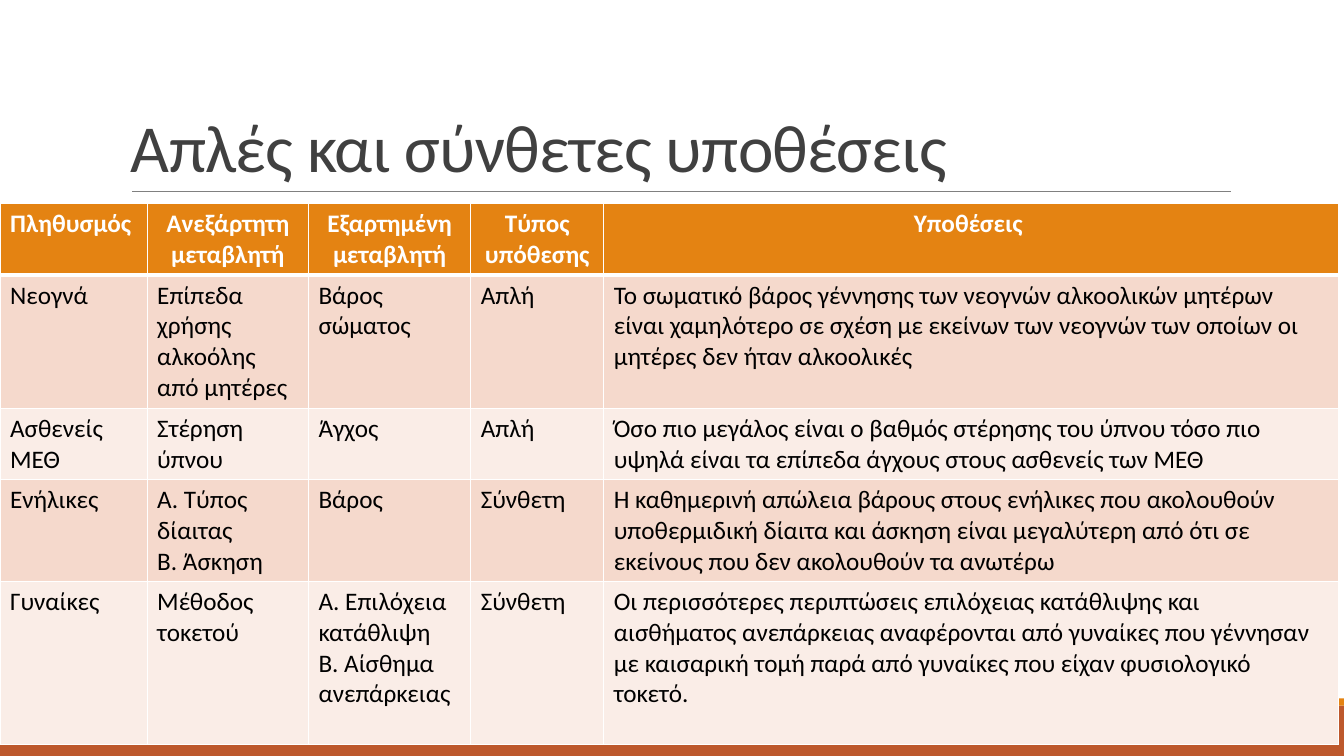
from dataclasses import dataclass

from lxml.etree import SubElement
from pptx import Presentation
from pptx.dml.color import RGBColor
from pptx.enum.shapes import MSO_CONNECTOR, MSO_SHAPE
from pptx.enum.text import MSO_ANCHOR, PP_ALIGN
from pptx.oxml.ns import qn
from pptx.util import Inches, Pt


@dataclass(frozen=True)
class Theme:
    font: str = "Calibri"
    title_size: float = 48
    table_size: float = 18
    title: str = "404040"
    rule: str = "808080"
    accent: str = "E48312"
    footer: str = "BD582C"
    light: str = "FFFFFF"
    text: str = "000000"
    bands: tuple = ("F5D9CC", "FAEDE7")


THEME = Theme()

# The slide is a grid of square units, ten to the inch
GRID_COLUMNS, GRID_ROWS = 133.33, 75
TABLE_COLUMNS = (14.6, 16, 16.1, 13.2, 72.9)
TABLE_ROWS = (7.1, 13.2, 7.1, 10.1, 16.2)

TITLE = "Απλές και σύνθετες υποθέσεις"
HYPOTHESES = (
    ("Πληθυσμός ", "Ανεξάρτητη μεταβλητή", "Εξαρτημένη μεταβλητή",
     "Τύπος υπόθεσης", "Υποθέσεις "),
    ("Νεογνά", "Επίπεδα χρήσης αλκοόλης από μητέρες", "Βάρος σώματος", "Απλή",
     "Το σωματικό βάρος γέννησης των νεογνών αλκοολικών μητέρων είναι "
     "χαμηλότερο σε σχέση με εκείνων των νεογνών των οποίων οι μητέρες δεν "
     "ήταν αλκοολικές"),
    ("Ασθενείς ΜΕΘ", "Στέρηση ύπνου", "Άγχος", "Απλή",
     "Όσο πιο μεγάλος είναι ο βαθμός στέρησης του ύπνου τόσο πιο υψηλά είναι "
     "τα επίπεδα άγχους στους ασθενείς των ΜΕΘ"),
    ("Ενήλικες", "Α. Τύπος δίαιτας\nΒ. Άσκηση", "Βάρος", "Σύνθετη",
     "Η καθημερινή απώλεια βάρους στους ενήλικες που ακολουθούν υποθερμιδική "
     "δίαιτα και άσκηση είναι μεγαλύτερη από ότι σε εκείνους που δεν "
     "ακολουθούν τα ανωτέρω"),
    ("Γυναίκες", "Μέθοδος τοκετού",
     "Α. Επιλόχεια κατάθλιψη\nΒ. Αίσθημα ανεπάρκειας", "Σύνθετη",
     "Οι περισσότερες περιπτώσεις επιλόχειας κατάθλιψης και αισθήματος "
     "ανεπάρκειας αναφέρονται από γυναίκες που γέννησαν με καισαρική τομή "
     "παρά από γυναίκες που είχαν φυσιολογικό τοκετό."),
)


def units(count):
    return Inches(count / 10)


def color(value):
    return RGBColor.from_string(value)


def style_font(font, size, font_color, bold=False):
    font.name, font.size, font.bold = THEME.font, Pt(size), bold
    font.color.rgb = color(font_color)


def add_band(slide, top, height, fill):
    shape = slide.shapes.add_shape(MSO_SHAPE.RECTANGLE, 0, units(top),
                                   units(GRID_COLUMNS), units(height))
    shape.shadow.inherit = False
    shape.fill.solid()
    shape.fill.fore_color.rgb = color(fill)
    shape.line.fill.background()


def add_rule(slide, left, right, top):
    connector = slide.shapes.add_connector(
        MSO_CONNECTOR.STRAIGHT, units(left), units(top), units(right), units(top))
    connector.line.color.rgb = color(THEME.rule)
    connector.line.width = Pt(0.5)
    SubElement(connector.element.spPr, qn("a:effectLst"))


def add_title(slide, text, left, top, width, height):
    box = slide.shapes.add_textbox(*map(units, (left, top, width, height)))
    frame = box.text_frame
    frame.word_wrap = True
    frame.vertical_anchor = MSO_ANCHOR.BOTTOM
    paragraph = frame.paragraphs[0]
    paragraph.line_spacing = 0.85
    run = paragraph.add_run()
    run.text = text
    style_font(run.font, THEME.title_size, THEME.title)
    run.font._element.set("spc", "-50")


def set_borders(cell, bottom_width):
    properties = cell._tc.get_or_add_tcPr()
    sides = {"a:lnL": 1, "a:lnR": 1, "a:lnT": 1, "a:lnB": bottom_width}
    for position, (side, width) in enumerate(sides.items()):
        line = SubElement(properties, qn(side), w=str(Pt(width)))
        fill = SubElement(line, qn("a:solidFill"))
        SubElement(fill, qn("a:srgbClr"), val=THEME.light)
        properties.insert(position, line)


def fill_cell(cell, text, row):
    header = row == 0
    cell.text = text
    cell.fill.solid()
    cell.fill.fore_color.rgb = color(
        THEME.accent if header else THEME.bands[(row - 1) % 2])
    for paragraph in cell.text_frame.paragraphs:
        paragraph.alignment = PP_ALIGN.CENTER if header else PP_ALIGN.LEFT
        style_font(paragraph.font, THEME.table_size,
                   THEME.light if header else THEME.text, header)
    # The header's lower edge is thick, and the first row shares it
    set_borders(cell, 3 if header else 1)
    if row == 1:
        cell._tc.tcPr.find(qn("a:lnT")).set("w", str(Pt(3)))


def add_hypothesis_table(slide, left, top):
    table = slide.shapes.add_table(
        len(TABLE_ROWS), len(TABLE_COLUMNS), units(left), units(top),
        units(sum(TABLE_COLUMNS)), units(sum(TABLE_ROWS))).table
    for column, width in zip(table.columns, TABLE_COLUMNS):
        column.width = units(width)
    for row, height in zip(table.rows, TABLE_ROWS):
        row.height = units(height)
    for row, texts in enumerate(HYPOTHESES):
        for column, text in enumerate(texts):
            fill_cell(table.cell(row, column), text, row)


def main():
    presentation = Presentation()
    presentation.slide_width = units(GRID_COLUMNS)
    presentation.slide_height = units(GRID_ROWS)
    slide = presentation.slides.add_slide(presentation.slide_layouts[6])

    # Footer bands
    add_band(slide, 70, 5, THEME.footer)
    add_band(slide, 69.3, 0.7, THEME.accent)

    # Title and its rule
    add_rule(slide, 13.1, 122.1, 19)
    add_title(slide, TITLE, 12, 3.1, 110, 15.9)

    # Table of hypotheses
    add_hypothesis_table(slide, 0, 20.2)

    presentation.save("out.pptx")


if __name__ == "__main__":
    main()
